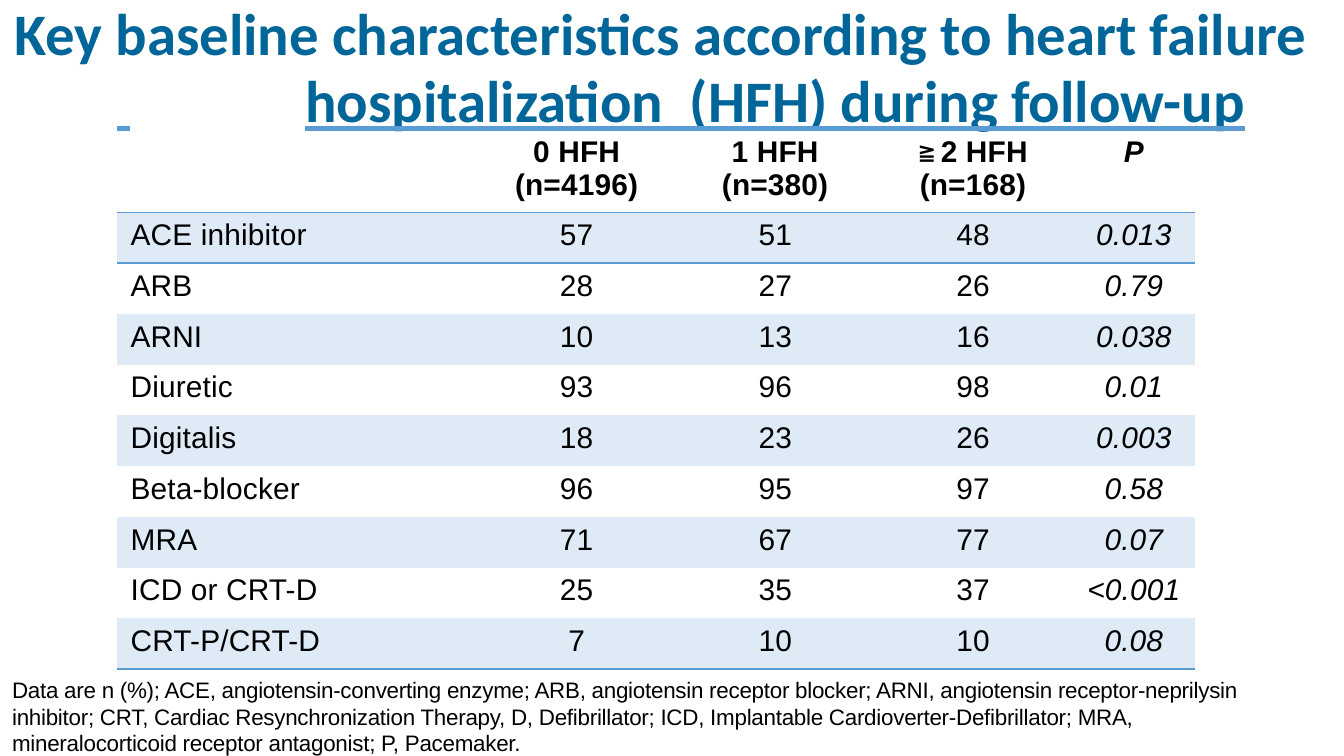
from lxml.etree import SubElement
from pptx import Presentation
from pptx.dml.color import RGBColor
from pptx.enum.text import PP_ALIGN as Align
from pptx.oxml.ns import qn
from pptx.util import Pt

BLUE, BAND, NAVY, BLACK = "5B9BD4", "DEEBF6", "006699", "000000"
NO_STYLE = "{2D5ABB26-0587-4C30-8999-92F81FD0307C}"

TITLE = "Key baseline characteristics according to heart failure"
SUBTITLE = "hospitalization  (HFH) during follow-up"
HEADERS = [("0 HFH", "(n=4196)"), ("1 HFH", "(n=380)"), ("2 HFH", "(n=168)"), ("P",)]
ROWS = [
    ("ACE inhibitor", "57", "51", "48", "0.013"),
    ("ARB", "28", "27", "26", "0.79"),
    ("ARNI", "10", "13", "16", "0.038"),
    ("Diuretic", "93", "96", "98", "0.01"),
    ("Digitalis", "18", "23", "26", "0.003"),
    ("Beta-blocker", "96", "95", "97", "0.58"),
    ("MRA", "71", "67", "77", "0.07"),
    ("ICD or CRT-D", "25", "35", "37", "<0.001"),
    ("CRT-P/CRT-D", "7", "10", "10", "0.08"),
]
FOOTNOTE = (
    "Data are n (%); ACE, angiotensin-converting enzyme; ARB, angiotensin receptor "
    "blocker; ARNI, angiotensin receptor-neprilysin inhibitor; CRT, Cardiac "
    "Resynchronization Therapy, D, Defibrillator; ICD, Implantable "
    "Cardioverter-Defibrillator; MRA, mineralocorticoid receptor antagonist; P, Pacemaker."
)
COLUMN_WIDTHS = [172.8, 128.2, 103, 100, 73.4]
COLUMN_INDENTS = [7.2, 18.5, 0, 9, 8]
HEADER_HEIGHT, ROW_HEIGHT = 41.8, 27.2


def color(hex_code):
    return RGBColor.from_string(hex_code)


def add_text(paragraph, text, font="Arial", size=16, fill=BLACK, bold=False,
             italic=False, spacing=0, align=None, line=None):
    """Append a run to the paragraph and return it."""
    run = paragraph.add_run()
    run.text = text
    run.font.name, run.font.size = font, Pt(size)
    run.font.bold, run.font.italic = bold, italic
    run.font.color.rgb = color(fill)
    if spacing:
        run.font._element.set("spc", str(round(spacing * 100)))
    if align is not None:
        paragraph.alignment = align
    if line:
        paragraph.line_spacing = Pt(line)
    return run


def add_box(left, top, width, height, inset):
    frame = slide.shapes.add_textbox(Pt(left), Pt(top), Pt(width), Pt(height)).text_frame
    frame.word_wrap = True
    frame.margin_left = frame.margin_right = frame.margin_bottom = 0
    frame.margin_top = Pt(inset)
    return frame


def add_solid_fill(parent, hex_code):
    fill = SubElement(parent, qn("a:solidFill"))
    SubElement(fill, qn("a:srgbClr"), val=hex_code)


def set_border(cell, side):
    border = SubElement(cell._tc.get_or_add_tcPr(), qn("a:" + side), w=str(Pt(1)))
    add_solid_fill(border, BLUE)


def underline(run):
    run.font.underline = True
    fill = SubElement(run.font._element, qn("a:uFill"))
    add_solid_fill(fill, BLUE)
    run.font._element.find(qn("a:latin")).addprevious(fill)


prs = Presentation()
prs.slide_width, prs.slide_height = Pt(720), Pt(405)
slide = prs.slides.add_slide(prs.slide_layouts[6])

# Table
graphic = slide.shapes.add_table(
    len(ROWS) + 1, len(COLUMN_WIDTHS), Pt(62.8), Pt(72),
    Pt(sum(COLUMN_WIDTHS)), Pt(HEADER_HEIGHT + ROW_HEIGHT * len(ROWS)))
table = graphic.table
table.first_row = table.horz_banding = False
graphic._element.find(".//" + qn("a:tableStyleId")).text = NO_STYLE
for column, width in zip(table.columns, COLUMN_WIDTHS):
    column.width = Pt(width)

P_COLUMN = len(COLUMN_WIDTHS) - 1
for r, lines_by_column in enumerate([[()] + HEADERS] + [[(v,) for v in row] for row in ROWS]):
    header = r == 0
    table.rows[r].height = Pt(HEADER_HEIGHT if header else ROW_HEIGHT)
    for c, lines in enumerate(lines_by_column):
        cell = table.cell(r, c)
        cell.margin_left = Pt(COLUMN_INDENTS[c])
        cell.margin_right = cell.margin_bottom = 0
        cell.margin_top = Pt(0 if header else 3.4)
        for i, text in enumerate(lines):
            frame = cell.text_frame
            paragraph = frame.add_paragraph() if i else frame.paragraphs[0]
            if text == "2 HFH":
                add_text(paragraph, "≧ ", font="Cambria", size=13.5, bold=True)
            add_text(paragraph, text, bold=header, italic=c == P_COLUMN, spacing=0.1,
                     align=Align.CENTER if c else Align.LEFT,
                     line=18.5 if header and i == 0 else None)
        if r == 1:
            set_border(cell, "lnT")
        if r in (0, 1, len(ROWS)):
            set_border(cell, "lnB")
        if r % 2:
            cell.fill.solid()
            cell.fill.fore_color.rgb = color(BAND)
        else:
            cell.fill.background()

# Footnote
footnote = add_box(6.5, 361.4, 674.6, 45.4, 0.7).paragraphs[0]
add_text(footnote, FOOTNOTE, size=12, spacing=-0.15)

# Title, with its second line set at a tab stop
title = add_box(6.5, -1.4, 707, 74.2, 1.4)
heading = dict(font="Calibri", size=31.5, fill=NAVY, bold=True, line=36)
first = title.paragraphs[0]
add_text(first, TITLE, **heading)
first._p.get_or_add_pPr().set("marL", str(Pt(1.4)))
second = title.add_paragraph()
for text in (" \t", SUBTITLE):
    underline(add_text(second, text, **heading))
properties = second._p.get_or_add_pPr()
properties.set("marL", str(Pt(56.2)))
tabs = SubElement(properties, qn("a:tabLst"))
SubElement(tabs, qn("a:tab"), pos=str(Pt(100.8)), algn="l")

prs.save("out.pptx")
